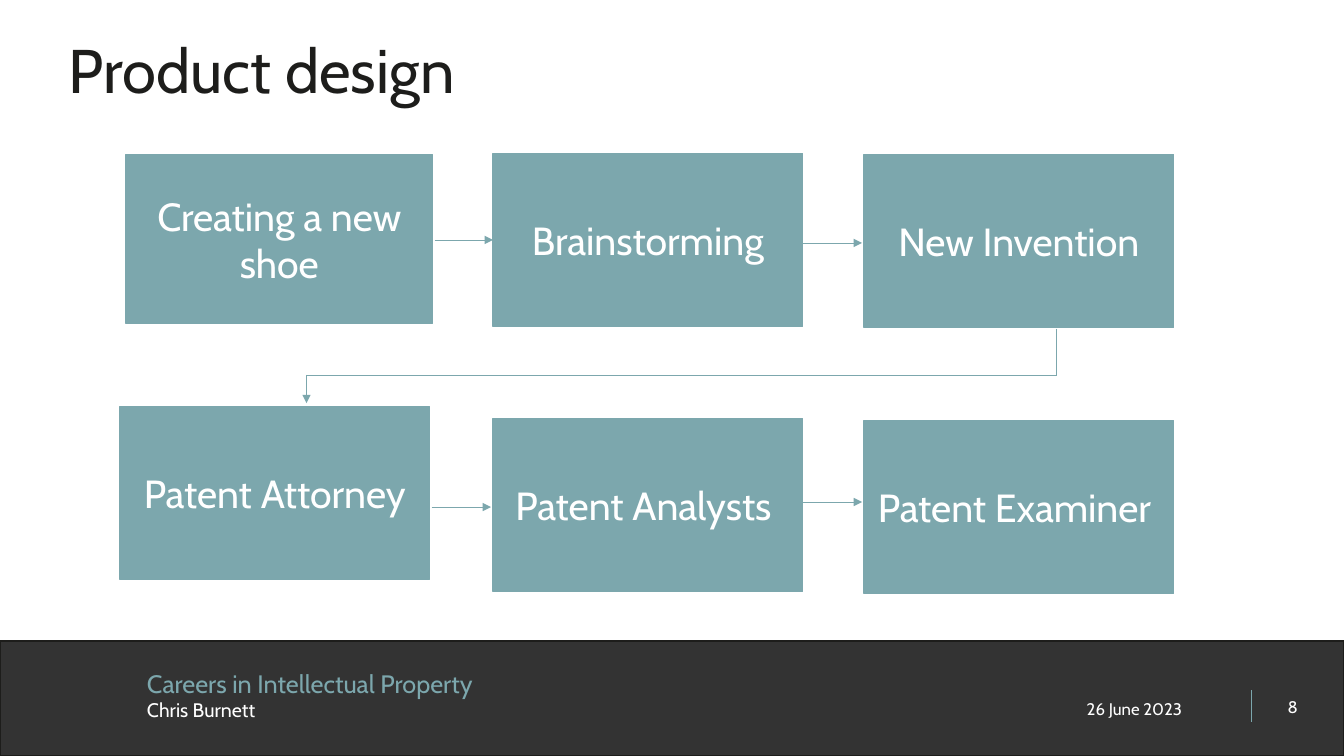
import pptx
import pptx.util
import pptx.dml.color
import pptx.enum.shapes
import pptx.enum.text
import pptx.oxml.ns
from dataclasses import dataclass
from lxml import etree

Inches = pptx.util.Inches
ALIGN = pptx.enum.text.PP_ALIGN
ANCHOR = pptx.enum.text.MSO_ANCHOR
RECT = pptx.enum.shapes.MSO_SHAPE.RECTANGLE
STRAIGHT = pptx.enum.shapes.MSO_CONNECTOR.STRAIGHT


@dataclass(frozen=True)
class Theme:
    font: str = "Cabin"
    teal: str = "7CA7AD"
    ink: str = "1D1D1B"
    white: str = "FFFFFF"
    black: str = "000000"
    title: int = 44
    step: int = 28
    deck: int = 18
    author: int = 14
    small: int = 12


THEME = Theme()
SLIDE_W, SLIDE_H = 13.33, 7.5
TITLE = "Product design"
DECK, AUTHOR = "Careers in Intellectual Property", "Chris Burnett"
DATE, PAGE = "26 June 2023", "8"

# text, left, top, width, height
STEPS = [
    ("Creating a new shoe", 1.25, 1.53, 3.04, 1.68),
    ("Brainstorming", 4.89, 1.52, 3.07, 1.72),
    ("New Invention", 8.57, 1.53, 3.07, 1.72),
    ("Patent Attorney", 1.19, 4.03, 3.07, 1.72),
    ("Patent Analysts ", 4.89, 4.15, 3.07, 1.72),
    ("Patent Examiner ", 8.57, 4.17, 3.07, 1.72),
]
# left, right, height on the slide, step joined at its left side
ARROWS = [
    (4.31, 4.89, 2.38, "Brainstorming"),
    (7.96, 8.55, 2.41, None),
    (4.28, 4.87, 5.03, None),
    (7.96, 8.55, 4.98, None),
]
# corners of the route from the first row to the second
RETURN_ROUTE = [(10.48, 3.26), (10.48, 3.72), (3.04, 3.72), (3.04, 4)]


def rgb(color):
    return pptx.dml.color.RGBColor.from_string(color)


def add_xml(parent, tag, **attrs):
    return etree.SubElement(parent, pptx.oxml.ns.qn(tag), attrs)


def write(tf, text, *, size, color=THEME.white, align=ALIGN.LEFT,
          anchor=ANCHOR.MIDDLE, spacing=None, new=False):
    """Fill the first paragraph of a text frame, or a new one after it."""
    tf.word_wrap = True
    tf.auto_size = pptx.enum.text.MSO_AUTO_SIZE.NONE
    tf.vertical_anchor = anchor
    p = tf.add_paragraph() if new else tf.paragraphs[0]
    p.alignment = align
    p.line_spacing = spacing
    r = p.add_run()
    r.text = text
    r.font.name = THEME.font
    r.font.size = pptx.util.Pt(size)
    r.font.color.rgb = rgb(color)


def add_text(slide, box, text, **fmt):
    tf = slide.shapes.add_textbox(*map(Inches, box)).text_frame
    write(tf, text, **fmt)
    return tf


def add_box(slide, box, fill, line):
    sp = slide.shapes.add_shape(RECT, *map(Inches, box))
    sp.shadow.inherit = False
    sp.fill.solid()
    sp.fill.fore_color.rgb = rgb(fill)
    sp.line.color.rgb = rgb(line)
    sp.line.width = pptx.util.Pt(1)
    return sp


def add_line(slide, start, end, arrow=False):
    line = slide.shapes.add_connector(STRAIGHT, *map(Inches, (*start, *end)))
    line.line.color.rgb = rgb(THEME.teal)
    line.line.width = pptx.util.Pt(0.5)
    if arrow:
        add_xml(line.line._get_or_add_ln(), "a:tailEnd", type="triangle")
    add_xml(line._element.spPr, "a:effectLst")
    return line


def add_footer(slide):
    band = add_box(slide, (0, 6.36, SLIDE_W, 1.14), THEME.black, THEME.ink)
    color = band._element.spPr.find(".//" + pptx.oxml.ns.qn("a:srgbClr"))
    add_xml(color, "a:alpha", val="80000")
    add_line(slide, (12.41, 6.85), (12.41, 7.16))
    add_text(slide, (10.68, 6.9, 1.55, 0.26), DATE, size=THEME.small)
    add_text(slide, (12.42, 6.9, 0.55, 0.23), PAGE, size=THEME.small,
             align=ALIGN.RIGHT)
    tf = add_text(slide, (1.36, 6.57, 4.5, 0.65), DECK, size=THEME.deck,
                  color=THEME.teal)
    write(tf, AUTHOR, size=THEME.author, new=True)


def add_title(slide):
    title = slide.shapes.title
    title.left, title.top, title.width, title.height = map(
        Inches, (0.58, 0, 6.3, 1.11))
    write(title.text_frame, TITLE, size=THEME.title, color=THEME.ink,
          anchor=ANCHOR.BOTTOM, spacing=0.9)


def add_flow(slide):
    steps = {}
    for text, *box in STEPS:
        sp = add_box(slide, box, THEME.teal, THEME.teal)
        write(sp.text_frame, text, size=THEME.step, align=ALIGN.CENTER)
        steps[text] = sp
    for left, right, y, target in ARROWS:
        arrow = add_line(slide, (left, y), (right, y), arrow=True)
        if target:
            arrow.end_connect(steps[target], 1)
    for start, end in zip(RETURN_ROUTE, RETURN_ROUTE[1:]):
        add_line(slide, start, end, arrow=end == RETURN_ROUTE[-1])


def main():
    prs = pptx.Presentation()
    prs.slide_width, prs.slide_height = Inches(SLIDE_W), Inches(SLIDE_H)
    slide = prs.slides.add_slide(prs.slide_layouts[5])
    add_footer(slide)
    add_title(slide)
    add_flow(slide)
    prs.save("out.pptx")


if __name__ == "__main__":
    main()
